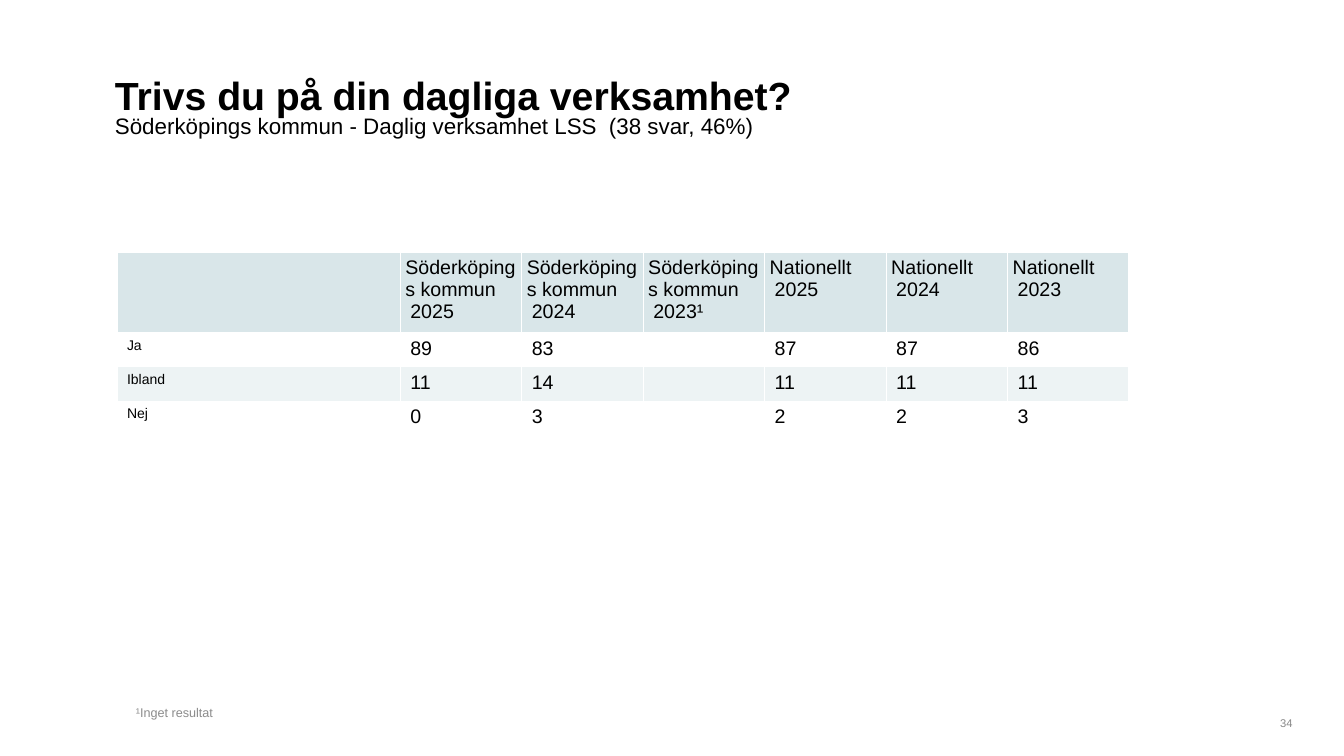
from lxml.etree import SubElement
from pptx import Presentation
from pptx.dml.color import RGBColor
from pptx.enum.text import MSO_ANCHOR as Anchor, MSO_AUTO_SIZE as AutoSize, PP_ALIGN as Align
from pptx.oxml.ns import qn
from pptx.util import Inches, Pt

TITLE = "Trivs du på din dagliga verksamhet?"
SUBTITLE = "Söderköpings kommun - Daglig verksamhet LSS  (38 svar, 46%)"
FOOTNOTE = "¹Inget resultat"
PAGE_NUMBER = "34"
HEADERS = [
    "",
    "Söderköpings kommun\n2025",
    "Söderköpings kommun\n2024",
    "Söderköpings kommun\n2023¹",
    "Nationellt\n2025",
    "Nationellt\n2024",
    "Nationellt\n2023",
]
ANSWERS = [
    ("Ja", "89", "83", "", "87", "87", "86"),
    ("Ibland", "11", "14", "", "11", "11", "11"),
    ("Nej", "0", "3", "", "2", "2", "3"),
]
COLORS = {
    "text": "000000",
    "footnote": "8C8C8C",
    "page": "898989",
    "header": "D9E6E9",
    "band": "EDF3F4",
    "border": "FFFFFF",
}
LABEL_WIDTH, VALUE_WIDTH = 2.81, 1.205
HEADER_HEIGHT, ANSWER_HEIGHT = 0.8, 0.34
CELL_INSET = Inches(0.05)


def format_text(text_frame, size, color="text", bold=False, align=Align.LEFT):
    for paragraph in text_frame.paragraphs:
        paragraph.alignment = align
        paragraph.space_before = Pt(0)
        for run in paragraph.runs:
            run.font.name = "Arial"
            run.font.size = Pt(size)
            run.font.bold = bold
            run.font.color.rgb = RGBColor.from_string(COLORS[color])


def fill_box(shape, box, text, size, anchor, **style):
    shape.left, shape.top, shape.width, shape.height = map(Inches, box)
    text_frame = shape.text_frame
    text_frame.text = text
    text_frame.word_wrap = True
    text_frame.auto_size = AutoSize.NONE
    text_frame.vertical_anchor = anchor
    format_text(text_frame, size, **style)


def add_borders(cell):
    properties = cell._tc.get_or_add_tcPr()
    for index, side in enumerate(("a:lnL", "a:lnR", "a:lnT", "a:lnB")):
        line = properties.makeelement(qn(side), {"w": str(Pt(1))})
        fill = SubElement(line, qn("a:solidFill"))
        SubElement(fill, qn("a:srgbClr"), val=COLORS["border"])
        properties.insert(index, line)


def fill_cell(cell, text, size, fill):
    cell.margin_left = cell.margin_right = CELL_INSET
    cell.margin_top = cell.margin_bottom = CELL_INSET
    cell.vertical_anchor = Anchor.TOP
    if fill:
        cell.fill.solid()
        cell.fill.fore_color.rgb = RGBColor.from_string(COLORS[fill])
    else:
        cell.fill.background()
    add_borders(cell)
    cell.text_frame.text = text
    format_text(cell.text_frame, size)
    last = cell.text_frame.paragraphs[-1]
    last._p.get_or_add_pPr().set("marL", str(CELL_INSET))
    if not text:
        SubElement(last._p, qn("a:endParaRPr"), sz=str(size * 100))


def add_answer_table(slide):
    rows = [HEADERS, *ANSWERS]
    widths = [LABEL_WIDTH] + [VALUE_WIDTH] * (len(HEADERS) - 1)
    heights = [HEADER_HEIGHT] + [ANSWER_HEIGHT] * len(ANSWERS)
    table = slide.shapes.add_table(
        len(rows), len(widths), Inches(1.16), Inches(2.5),
        Inches(sum(widths)), Inches(sum(heights))).table
    table.first_row = table.horz_banding = False
    for column, width in zip(table.columns, widths):
        column.width = Inches(width)
    for row_index, (texts, height) in enumerate(zip(rows, heights)):
        table.rows[row_index].height = Inches(height)
        if row_index == 0:
            fill = "header"
        else:
            fill = "band" if row_index % 2 == 0 else None
        for column_index, text in enumerate(texts):
            size = 10 if column_index == 0 else 14
            fill_cell(table.cell(row_index, column_index), text, size, fill)


def main():
    presentation = Presentation()
    presentation.slide_width = Inches(13.33)
    presentation.slide_height = Inches(7.5)
    slide = presentation.slides.add_slide(presentation.slide_layouts[0])

    title, subtitle = slide.placeholders
    fill_box(title, (1.04, 0.62, 11.25, 0.42), TITLE, 28, Anchor.TOP, bold=True)
    title.text_frame.margin_top = Inches(0.09)
    fill_box(subtitle, (1.04, 1.04, 11.25, 0.42), SUBTITLE, 16, Anchor.TOP)
    subtitle.text_frame.margin_top = Inches(0.07)

    add_answer_table(slide)

    footnote = slide.shapes.add_textbox(0, 0, 0, 0)
    fill_box(footnote, (1.25, 3.23, 7.6, 3.96), FOOTNOTE, 9, Anchor.BOTTOM, color="footnote")
    page_number = slide.shapes.add_textbox(0, 0, 0, 0)
    fill_box(page_number, (12.5, 7.08, 0.42, 0.21), PAGE_NUMBER, 8, Anchor.BOTTOM,
             color="page", align=Align.RIGHT)

    presentation.save("out.pptx")


if __name__ == "__main__":
    main()
